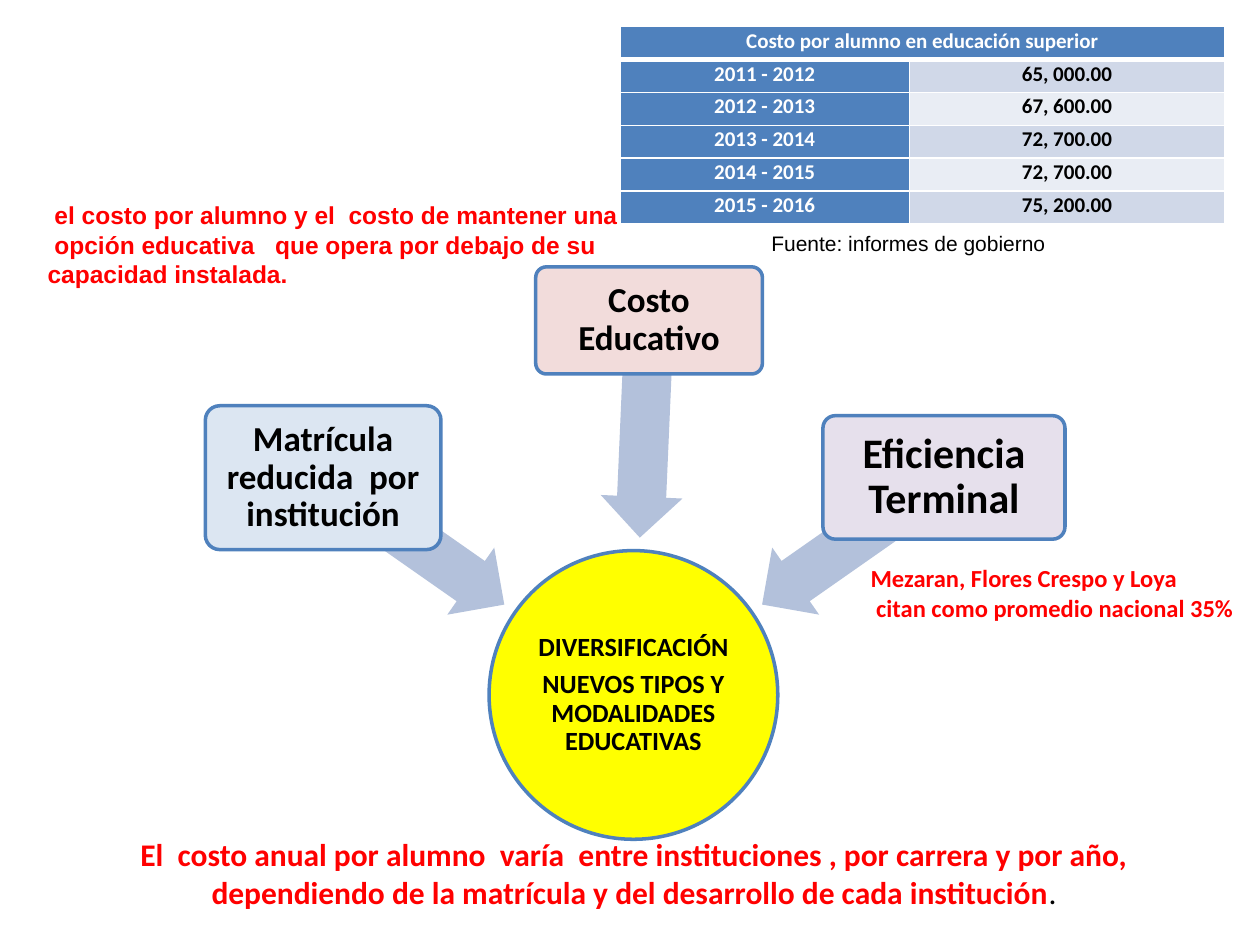
from lxml import etree
from pptx import Presentation
from pptx.dml.color import RGBColor
from pptx.enum import shapes, text
from pptx.oxml import ns
from pptx.util import Cm, Pt

BLUE, WHITE, BLACK, RED = "4F81BD", "FFFFFF", "000000", "FF0000"
ARROW_FILL = "B3C1DB"
BANDS = ("D0D8E8", "E9EDF4")
CENTER = text.PP_ALIGN.CENTER
KIND = shapes.MSO_SHAPE

COST_TITLE = "Costo por alumno en educación superior"
COSTS = [
    ("2011 - 2012", "65, 000.00"),
    ("2012 - 2013", "67, 600.00"),
    ("2013 - 2014", "72, 700.00"),
    ("2014 - 2015", "72, 700.00"),
    ("2015 - 2016", "75, 200.00"),
]
# Arrow place and rotation, then the box it leaves from: place, fill, size, wording
FACTORS = [
    ((6.1, 10.08, 4.47, 1.65), 215,
     (4.14, 8.18, 4.75, 2.9), "DCE6F2", 20, "Matrícula reducida  por institución"),
    ((10.8, 7.82, 4.39, 1.65), 272.5,
     (10.8, 5.38, 4.57, 2.16), "F2DCDB", 20, "Costo Educativo"),
    ((14.96, 10.08, 4.47, 1.65), 325,
     (16.59, 8.38, 4.88, 2.49), "E6E0EC", 24, "Eficiencia Terminal"),
]


def color(value):
    return RGBColor.from_string(value)


def set_all(target, values):
    for name, value in values.items():
        setattr(target, name, value)


def set_margins(target, horizontal, vertical):
    set_all(target, {"margin_left": Cm(horizontal), "margin_right": Cm(horizontal),
                     "margin_top": Cm(vertical), "margin_bottom": Cm(vertical)})


def add_run(paragraph, wording, size, hue=BLACK, font="Calibri", bold=True):
    run = paragraph.add_run()
    run.text = wording
    set_all(run.font, {"name": font, "size": Pt(size), "bold": bold})
    run.font.color.rgb = color(hue)


def write_lines(frame, lines, size, paragraph_format, **run_format):
    """Write one paragraph for each line and return the last one."""
    for index, line in enumerate(lines):
        paragraph = frame.add_paragraph() if index else frame.paragraphs[0]
        set_all(paragraph, paragraph_format)
        add_run(paragraph, line, size, **run_format)
    return paragraph


def add_figure(slide, kind, place, fill, outlined=True):
    shape = slide.shapes.add_shape(kind, *map(Cm, place))
    shape.shadow.inherit = False
    shape.fill.solid()
    shape.fill.fore_color.rgb = color(fill)
    if outlined:
        shape.line.color.rgb = color(BLUE)
        shape.line.width = Pt(2)
    else:
        shape.line.fill.background()
    return shape


def label_figure(shape, lines, size, margin):
    frame = shape.text_frame
    set_all(frame, {"word_wrap": True, "vertical_anchor": text.MSO_ANCHOR.MIDDLE})
    set_margins(frame, margin, margin)
    spacing = {"alignment": CENTER, "line_spacing": 0.9, "space_after": Pt(size * 0.35)}
    write_lines(frame, lines, size, spacing)


def add_factor(slide, arrow_place, rotation, box_place, fill, size, wording):
    arrow = add_figure(slide, KIND.LEFT_ARROW, arrow_place, ARROW_FILL, outlined=False)
    arrow.rotation = rotation
    arrow.adjustments[0] = 0.6
    box = add_figure(slide, KIND.ROUNDED_RECTANGLE, box_place, fill)
    box.adjustments[0] = 0.1
    label_figure(box, [wording], size, 0.11)


def add_note(slide, place, lines, size, alignment=None, wrap=False, **run_format):
    frame = slide.shapes.add_textbox(*map(Cm, place)).text_frame
    set_all(frame, {"word_wrap": wrap, "auto_size": text.MSO_AUTO_SIZE.SHAPE_TO_FIT_TEXT})
    return write_lines(frame, lines, size, {"alignment": alignment}, **run_format)


def set_borders(cell, bottom_width):
    properties = cell._tc.get_or_add_tcPr()
    for side, width in (("L", 1), ("R", 1), ("T", 1), ("B", bottom_width)):
        line = etree.SubElement(properties, ns.qn(f"a:ln{side}"), w=str(Pt(width)))
        fill = etree.SubElement(line, ns.qn("a:solidFill"))
        etree.SubElement(fill, ns.qn("a:srgbClr"), val=WHITE)


def format_cell(cell, wording, fill, hue, bottom_width=1):
    set_margins(cell, 0.18, 0)
    set_borders(cell, bottom_width)
    cell.fill.solid()
    cell.fill.fore_color.rgb = color(fill)
    if wording:
        write_lines(cell.text_frame, [wording], 12,
                    {"alignment": CENTER, "line_spacing": 1.07}, hue=hue)


def add_cost_table(slide):
    row_count = len(COSTS) + 1
    place = (12.5, 0.53, 12.19, 3.99)
    table = slide.shapes.add_table(row_count, 2, *map(Cm, place)).table
    table.columns[0].width, table.columns[1].width = Cm(5.83), Cm(6.36)
    for row in table.rows:
        row.height = Cm(place[3] / row_count)
    table.cell(0, 0).merge(table.cell(0, 1))
    for column, wording in enumerate((COST_TITLE, "")):
        format_cell(table.cell(0, column), wording, BLUE, WHITE, bottom_width=3)
    for index, (period, cost) in enumerate(COSTS):
        format_cell(table.cell(index + 1, 0), period, BLUE, WHITE)
        format_cell(table.cell(index + 1, 1), cost, BANDS[index % 2], BLACK)


def add_notes(slide):
    add_note(slide, (14.91, 4.52, 6.81, 0.76), ["Fuente: informes de gobierno"], 12,
             CENTER, wrap=True, font="Arial", bold=False)
    add_note(slide, (0.71, 3.91, 12.47, 2.06),
             [" el costo por alumno y el  costo de mantener una",
              " opción educativa   que opera por debajo de su",
              "capacidad instalada."], 14, hue=RED, font="Arial")
    add_note(slide, (17.3, 11.23, 7.87, 1.45),
             ["Mezaran, Flores Crespo y Loya",
              " citan como promedio nacional 35%"], 14, hue=RED)
    conclusion = add_note(
        slide, (2.49, 16.71, 20.73, 1.8),
        ["El  costo anual por alumno  varía  entre instituciones , por carrera y por año, ",
         "dependiendo de la matrícula y del desarrollo de cada institución"],
        18, CENTER, hue=RED)
    add_run(conclusion, ". ", 18, bold=False)


def main():
    presentation = Presentation()
    set_all(presentation, {"slide_width": Cm(25.4), "slide_height": Cm(19.05)})
    slide = presentation.slides.add_slide(presentation.slide_layouts[6])
    circle = add_figure(slide, KIND.OVAL, (9.86, 11.1, 5.82, 5.82), "FFFF00")
    label_figure(circle, ["DIVERSIFICACIÓN", "NUEVOS TIPOS Y MODALIDADES EDUCATIVAS"], 15, 0.03)
    for factor in FACTORS:
        add_factor(slide, *factor)
    add_cost_table(slide)
    add_notes(slide)
    presentation.save("out.pptx")


if __name__ == "__main__":
    main()
